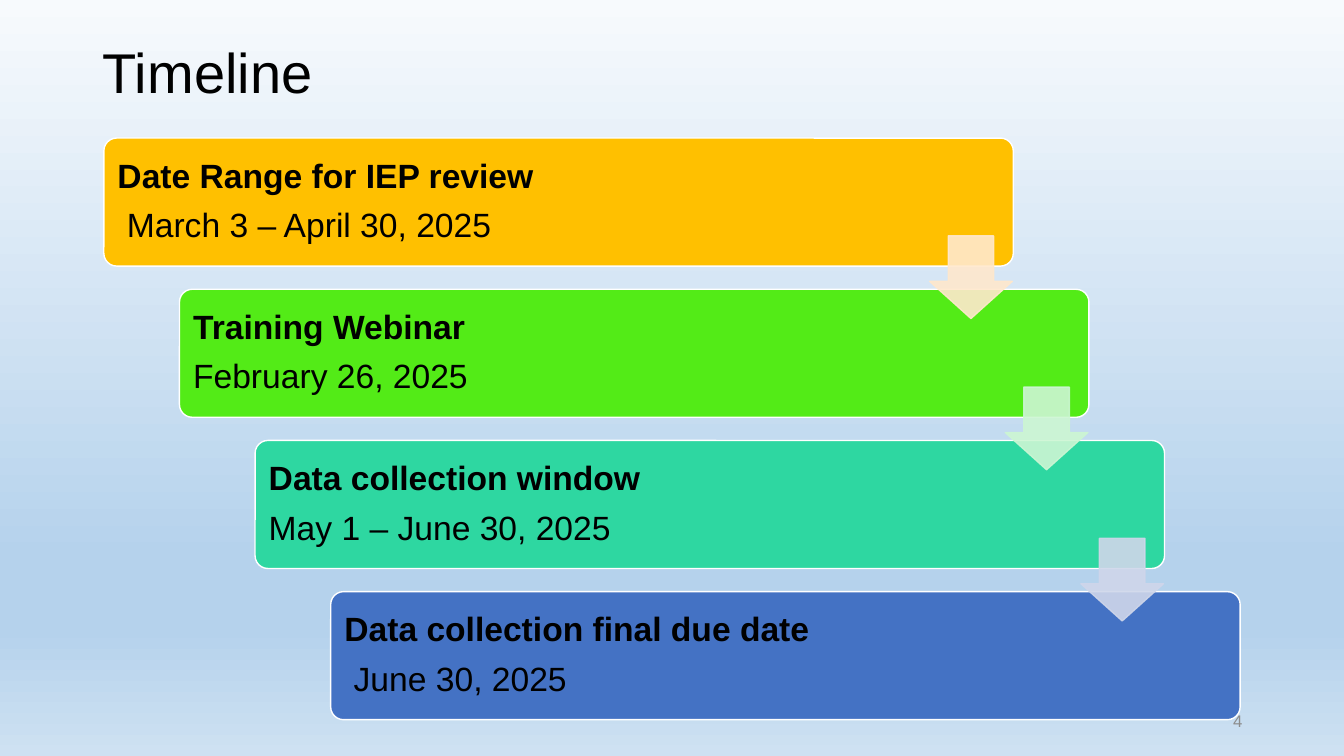
import dataclasses

import pptx
import pptx.dml.color
import pptx.enum.shapes
import pptx.enum.text
import pptx.oxml
import pptx.oxml.ns
import pptx.util

Inches = pptx.util.Inches
Pt = pptx.util.Pt
Shape = pptx.enum.shapes.MSO_SHAPE
Align = pptx.enum.text.PP_ALIGN
Anchor = pptx.enum.text.MSO_ANCHOR


@dataclasses.dataclass(frozen=True)
class Theme:
    font: str = "Arial"
    ink: str = "000000"
    grey: str = "8C8C8C"
    edge: str = "FFFFFF"
    title: int = 40
    body: int = 24
    small: int = 12
    back: tuple = ((0, "F7FAFD"), (74, "B5D2EC"), (83, "B5D2EC"), (100, "CEE1F2"))
    cards: tuple = ("FFC000", "53EB17", "2ED7A1", "4472C4")
    arrows: tuple = ("FFE8CC", "CCF6D3", "CFD6EA")


THEME = Theme()

STEPS = (
    ("Date Range for IEP review", " March 3 – April 30, 2025"),
    ("Training Webinar", "February 26, 2025"),
    ("Data collection window", "May 1 – June 30, 2025"),
    ("Data collection final due date", " June 30, 2025"),
)
LEFT, TOP = 1.03, 1.37
STEP_X, STEP_Y = 0.75, 1.5
CARD_W, CARD_H = 9.02, 1.27
ARROW_X, ARROW_Y, ARROW = 8.19, 0.97, 0.82


def rgb(code):
    return pptx.dml.color.RGBColor.from_string(code)


def style(para, size, color, bold=False):
    for run in para.runs:
        run.font.name = THEME.font
        run.font.size = Pt(size)
        run.font.bold = bold
        run.font.color.rgb = rgb(color)


def paint_back(slide):
    """Fill the background with the theme's vertical gradient."""
    fill = slide.background.fill
    fill.gradient()
    fill.gradient_angle = 270
    stops = fill.gradient_stops
    group = slide.background._cSld.find(".//" + pptx.oxml.ns.qn("a:gsLst"))
    for stop in list(group):
        group.remove(stop)
    for place, color in THEME.back:
        group.append(pptx.oxml.parse_xml(
            f'<a:gs {pptx.oxml.ns.nsdecls("a")} pos="{place * 1000}">'
            f'<a:srgbClr val="{color}"/></a:gs>'))


def add_title(slide, text):
    title = slide.shapes.title
    title.left, title.top = Inches(0.92), Inches(0.12)
    title.width, title.height = Inches(11.5), Inches(1.25)
    frame = title.text_frame
    frame.text = text
    frame.vertical_anchor = Anchor.MIDDLE
    para = frame.paragraphs[0]
    para.alignment = Align.LEFT
    para.line_spacing = 0.9
    style(para, THEME.title, THEME.ink)


def add_block(slide, kind, box, fill, line):
    shape = slide.shapes.add_shape(kind, *map(Inches, box))
    shape.shadow.inherit = False
    shape.fill.solid()
    shape.fill.fore_color.rgb = rgb(fill)
    shape.line.color.rgb = rgb(line)
    shape.line.width = Pt(1)
    return shape


def add_card(slide, x, y, texts, color):
    box = (x, y, CARD_W, CARD_H)
    card = add_block(slide, Shape.ROUNDED_RECTANGLE, box, color, THEME.edge)
    card.adjustments[0] = 0.1
    frame = card.text_frame
    frame.word_wrap = True
    frame.vertical_anchor = Anchor.MIDDLE
    frame.margin_left = frame.margin_right = Inches(0.1)
    frame.margin_top = frame.margin_bottom = Inches(0.1)
    frame.text = "\n".join(texts)
    for row, para in enumerate(frame.paragraphs):
        para.alignment = Align.LEFT
        para.line_spacing = 0.9
        para.space_after = Pt(9.5)
        style(para, THEME.body, THEME.ink, bold=row == 0)


def add_arrow(slide, x, y, color):
    box = (x, y, ARROW, ARROW)
    arrow = add_block(slide, Shape.DOWN_ARROW, box, color, color)
    arrow.adjustments[0] = 0.55
    arrow.adjustments[1] = 0.45
    for tone in arrow._element.spPr.iter(pptx.oxml.ns.qn("a:srgbClr")):
        tone.append(pptx.oxml.parse_xml(
            f'<a:alpha {pptx.oxml.ns.nsdecls("a")} val="90000"/>'))


def add_number(slide, text):
    box = slide.shapes.add_textbox(Inches(9.42), Inches(6.95), Inches(3), Inches(0.4))
    frame = box.text_frame
    frame.word_wrap = True
    frame.vertical_anchor = Anchor.MIDDLE
    frame.text = text
    frame.paragraphs[0].alignment = Align.RIGHT
    style(frame.paragraphs[0], THEME.small, THEME.grey)


def main():
    deck = pptx.Presentation()
    deck.slide_width, deck.slide_height = Inches(13.33), Inches(7.5)
    slide = deck.slides.add_slide(deck.slide_layouts.get_by_name("Title Only"))
    paint_back(slide)
    add_title(slide, "Timeline")
    spots = [(LEFT + i * STEP_X, TOP + i * STEP_Y) for i in range(len(STEPS))]
    for (x, y), texts, color in zip(spots, STEPS, THEME.cards):
        add_card(slide, x, y, texts, color)
    for (x, y), color in zip(spots, THEME.arrows):
        add_arrow(slide, x + ARROW_X, y + ARROW_Y, color)
    add_number(slide, "4")
    deck.save("out.pptx")


if __name__ == "__main__":
    main()
